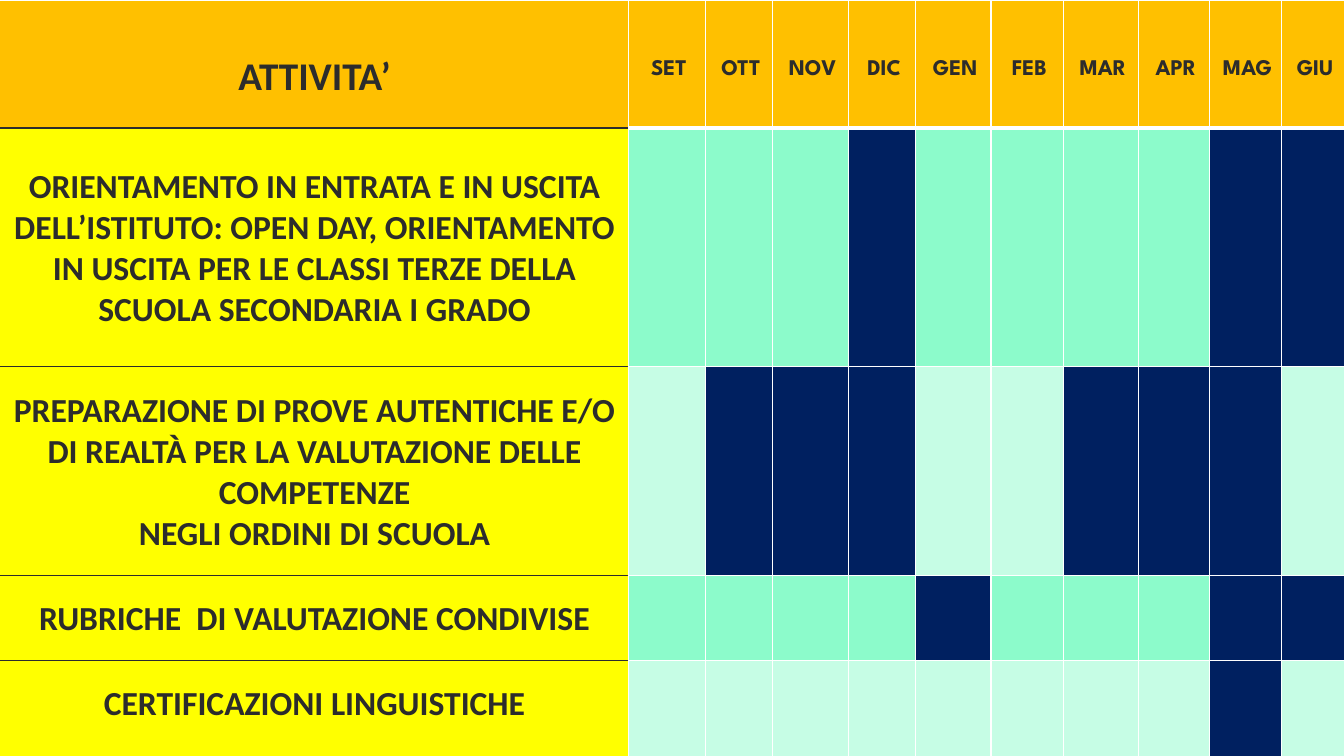
from dataclasses import dataclass

from lxml import etree
from pptx import Presentation
from pptx import util as u
from pptx.dml import color as dml
from pptx.enum import text as txt
from pptx.oxml import ns

HUES = {
    "back": "F56617", "head": "FFC000", "task": "FFFF00", "busy": "002060",
    "odd": "8CFBCB", "even": "C6FDE5", "ink": "2C2C2C", "line": "FFFFFF",
}
COLS = [6.26, 0.77, 0.66, 0.76, 0.66, 0.75, 0.72, 0.74, 0.71, 0.71, 0.63]
MONTHS = "SET OTT NOV DIC GEN FEB MAR APR MAG GIU".split()
HEAD_H = 1.27


@dataclass
class Task:
    lines: list[str]
    busy: set[str]
    height: float
    space: float = 1.0
    anchor: txt.MSO_ANCHOR = txt.MSO_ANCHOR.MIDDLE


@dataclass
class Style:
    size: int
    font: str
    space: float
    anchor: txt.MSO_ANCHOR = txt.MSO_ANCHOR.MIDDLE


@dataclass
class Edge:
    hue: str = "line"
    width: int = 1


TASKS = [
    Task(["ORIENTAMENTO IN ENTRATA E IN USCITA DELL’ISTITUTO: OPEN DAY, "
          "ORIENTAMENTO IN USCITA PER LE CLASSI TERZE DELLA "
          "SCUOLA SECONDARIA I GRADO"], {"DIC", "MAG", "GIU"}, 2.37),
    Task(["PREPARAZIONE DI PROVE AUTENTICHE E/O DI REALTÀ "
          "PER LA VALUTAZIONE DELLE COMPETENZE", "NEGLI ORDINI DI SCUOLA"],
         {"OTT", "NOV", "DIC", "MAR", "APR", "MAG"}, 2.07),
    Task(["RUBRICHE  DI VALUTAZIONE CONDIVISE"], {"GEN", "MAG", "GIU"},
         0.84, 1.5, txt.MSO_ANCHOR.TOP),
    Task(["CERTIFICAZIONI LINGUISTICHE"], {"MAG"}, 0.96, 1.5,
         txt.MSO_ANCHOR.TOP),
]


def paint(cell, hue: str, top: Edge = Edge(), low: Edge = Edge()) -> None:
    """Set the four borders, then the fill."""
    props = cell._tc.get_or_add_tcPr()
    for side, edge in zip("LRTB", (Edge(), Edge(), top, low)):
        line = etree.SubElement(props, ns.qn(f"a:ln{side}"),
                                w=str(u.Pt(edge.width)))
        fill = etree.SubElement(line, ns.qn("a:solidFill"))
        etree.SubElement(fill, ns.qn("a:srgbClr"), val=HUES[edge.hue])
    cell.fill.solid()
    cell.fill.fore_color.rgb = dml.RGBColor.from_string(HUES[hue])


def write(cell, lines: list[str], style: Style) -> None:
    """Write centred bold paragraphs."""
    cell.margin_left, cell.margin_top = u.Inches(0.07), u.Inches(0.03)
    cell.margin_right, cell.margin_bottom = u.Inches(0.03), u.Inches(0)
    cell.vertical_anchor = style.anchor
    frame = cell.text_frame
    for i, words in enumerate(lines):
        para = frame.add_paragraph() if i else frame.paragraphs[0]
        para.alignment = txt.PP_ALIGN.CENTER
        para.line_spacing = style.space
        run = para.add_run()
        run.text = words
        run.font.name, run.font.size = style.font, u.Pt(style.size)
        run.font.bold = True
        run.font.color.rgb = dml.RGBColor.from_string(HUES["ink"])


def main() -> None:
    deck = Presentation()
    deck.slide_width, deck.slide_height = u.Inches(13.33), u.Inches(7.5)
    slide = deck.slides.add_slide(deck.slide_layouts[6])
    back = slide.background.fill
    back.solid()
    back.fore_color.rgb = dml.RGBColor.from_string(HUES["back"])

    # Table grid
    rows = [HEAD_H] + [task.height for task in TASKS]
    table = slide.shapes.add_table(
        len(rows), len(COLS), u.Inches(-0.03), u.Inches(0),
        u.Inches(sum(COLS)), u.Inches(sum(rows))).table
    table.horz_banding = False
    for col, width in zip(table.columns, COLS):
        col.width = u.Inches(width)
    for row, height in zip(table.rows, rows):
        row.height = u.Inches(height)

    # Header row
    dark, thick = Edge("ink"), Edge(width=3)
    paint(table.cell(0, 0), "head", low=dark)
    write(table.cell(0, 0), ["ATTIVITA’"], Style(28, "Calibri", 1.5))
    for c, month in enumerate(MONTHS, 1):
        paint(table.cell(0, c), "head", low=thick)
        write(table.cell(0, c), [month], Style(16, "League Spartan", 1.5))

    # Activities and their months
    for r, task in enumerate(TASKS, 1):
        name = table.cell(r, 0)
        paint(name, "task", dark, Edge() if r == len(TASKS) else dark)
        write(name, task.lines, Style(24, "Calibri", task.space, task.anchor))
        free = "odd" if r % 2 else "even"
        for c, month in enumerate(MONTHS, 1):
            paint(table.cell(r, c), "busy" if month in task.busy else free,
                  thick if r == 1 else Edge())

    deck.save("out.pptx")


if __name__ == "__main__":
    main()
